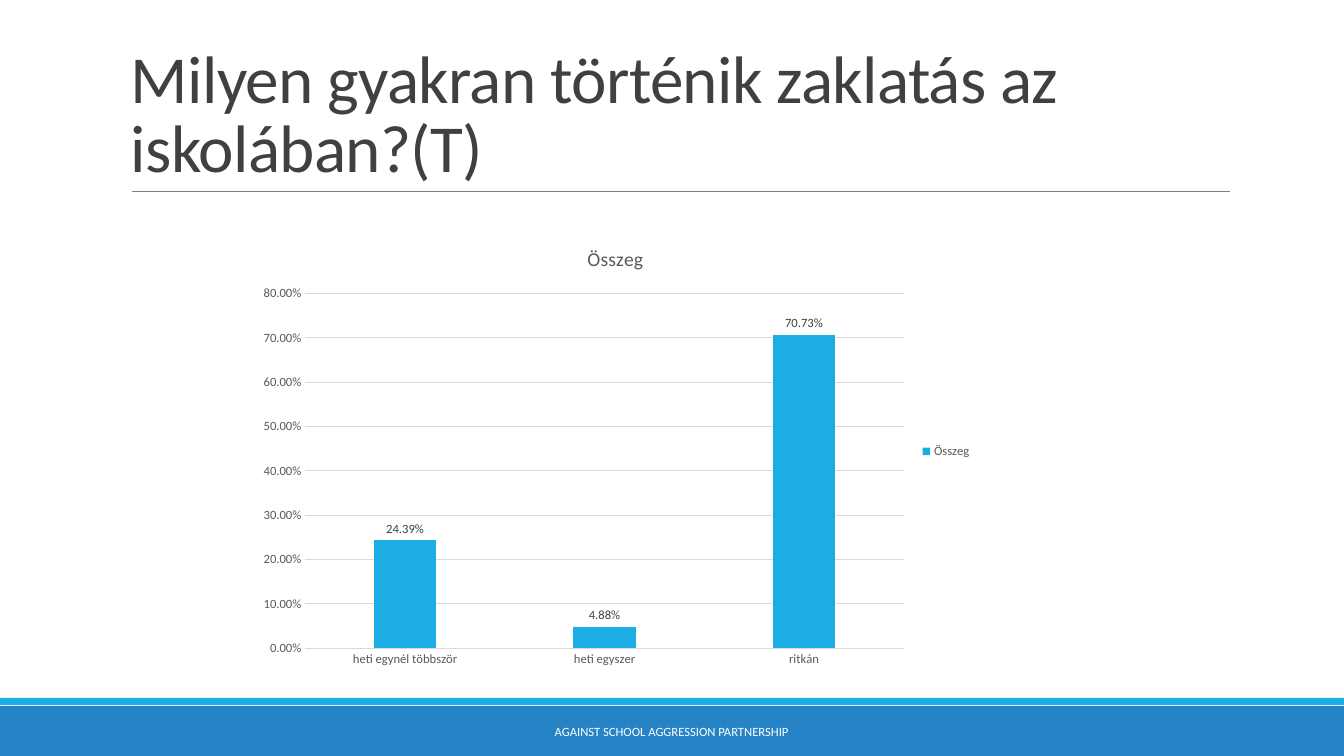
from pptx import Presentation
from pptx.chart.data import CategoryChartData
from pptx.dml.color import RGBColor
from pptx.enum.chart import XL_CHART_TYPE, XL_LABEL_POSITION, XL_LEGEND_POSITION, XL_TICK_MARK
from pptx.enum.shapes import MSO_CONNECTOR, MSO_SHAPE
from pptx.enum.text import MSO_ANCHOR, PP_ALIGN
from pptx.oxml.ns import qn
from pptx.util import Emu, Pt
from lxml import etree

EMU_PER_PX = 914400 / 100.8
SLIDE_SIZE = (1344, 756)
FONT = "Calibri"
COLORS = {
    "title": "404040",
    "chart_text": "595959",
    "grid": "D9D9D9",
    "rule": "808080",
    "bar": "1CADE4",
    "footer": "2683C6",
    "white": "FFFFFF",
}
FREQUENCIES = {
    "heti egynél többször": 0.2439,
    "heti egyszer": 0.0488,
    "ritkán": 0.7073,
}


def px(*lengths):
    return [Emu(round(length * EMU_PER_PX)) for length in lengths]


def color(name):
    return RGBColor.from_string(COLORS[name])


def apply_format(target, values):
    for attribute, value in values.items():
        setattr(target, attribute, value)


def style_font(font, size, color_name):
    apply_format(font, {"name": FONT, "size": Pt(size), "bold": False})
    font.color.rgb = color(color_name)


def style_line(line, color_name, width):
    line.color.rgb = color(color_name)
    line.width = Pt(width)


def add_band(slide, box, color_name):
    band = slide.shapes.add_shape(MSO_SHAPE.RECTANGLE, *px(*box))
    band.shadow.inherit = False
    band.fill.solid()
    band.fill.fore_color.rgb = color(color_name)
    band.line.fill.background()


def add_rule(slide, ends, color_name):
    rule = slide.shapes.add_connector(MSO_CONNECTOR.STRAIGHT, *px(*ends))
    style_line(rule.line, color_name, 0.5)
    etree.SubElement(rule._element.spPr, qn("a:effectLst"))


def add_text(slide, box, wording, size, color_name, anchor, paragraph_format, tracking=0):
    """Add a one-paragraph text box; tracking is in hundredths of a point."""
    frame = slide.shapes.add_textbox(*px(*box)).text_frame
    apply_format(frame, {"word_wrap": True, "vertical_anchor": anchor})
    paragraph = frame.paragraphs[0]
    apply_format(paragraph, paragraph_format)
    run = paragraph.add_run()
    run.text = wording
    style_font(run.font, size, color_name)
    if tracking:
        run.font._element.set("spc", str(tracking))


def style_axes(chart):
    for axis in (chart.category_axis, chart.value_axis):
        apply_format(axis, {
            "major_tick_mark": XL_TICK_MARK.NONE,
            "minor_tick_mark": XL_TICK_MARK.NONE,
        })
        style_font(axis.tick_labels.font, 9, "chart_text")
    style_line(chart.category_axis.format.line, "grid", 0.75)

    shares = chart.value_axis
    apply_format(shares, {
        "minimum_scale": 0,
        "maximum_scale": 0.8,
        "major_unit": 0.1,
        "has_major_gridlines": True,
    })
    shares.format.line.fill.background()
    style_line(shares.major_gridlines.format.line, "grid", 0.75)
    apply_format(shares.tick_labels, {
        "number_format": "0.00%",
        "number_format_is_linked": False,
    })


def style_bars(plot):
    apply_format(plot, {"gap_width": 219, "overlap": -27, "vary_by_categories": False})
    bars = plot.series[0]
    bars.format.fill.solid()
    bars.format.fill.fore_color.rgb = color("bar")
    labels = bars.data_labels
    apply_format(labels, {
        "show_value": True,
        "number_format": "0.00%",
        "number_format_is_linked": False,
        "position": XL_LABEL_POSITION.OUTSIDE_END,
    })
    style_font(labels.font, 9, "title")


def add_frequency_chart(slide, box, name, frequencies):
    data = CategoryChartData(number_format="0.00%")
    data.categories = list(frequencies)
    data.add_series(name, list(frequencies.values()))
    chart = slide.shapes.add_chart(XL_CHART_TYPE.COLUMN_CLUSTERED, *px(*box), data).chart
    style_font(chart.font, 10, "chart_text")

    chart.has_title = True
    heading = chart.chart_title.text_frame.paragraphs[0].add_run()
    heading.text = name
    style_font(heading.font, 14, "chart_text")
    chart.chart_title.include_in_layout = False

    chart.has_legend = True
    apply_format(chart.legend, {
        "position": XL_LEGEND_POSITION.RIGHT,
        "include_in_layout": False,
    })
    style_font(chart.legend.font, 9, "chart_text")
    style_axes(chart)
    style_bars(chart.plots[0])


def main():
    deck = Presentation()
    deck.slide_width, deck.slide_height = px(*SLIDE_SIZE)
    slide = deck.slides.add_slide(deck.slide_layouts[6])

    add_band(slide, (0, 706, 1344, 50), "footer")
    add_band(slide, (0, 698, 1344, 7), "bar")
    add_rule(slide, (132, 191, 1230, 191), "rule")
    add_text(slide, (121, 31, 1109, 160), "Milyen gyakran történik zaklatás az iskolában?(T)",
             48, "title", MSO_ANCHOR.BOTTOM, {"line_spacing": 0.85}, tracking=-50)
    add_text(slide, (406, 712, 531, 40), "AGAINST SCHOOL AGGRESSION PARTNERSHIP",
             9, "white", MSO_ANCHOR.MIDDLE, {"alignment": PP_ALIGN.CENTER})
    add_frequency_chart(slide, (249, 227, 733, 449), "Összeg", FREQUENCIES)

    deck.save("out.pptx")


if __name__ == "__main__":
    main()
